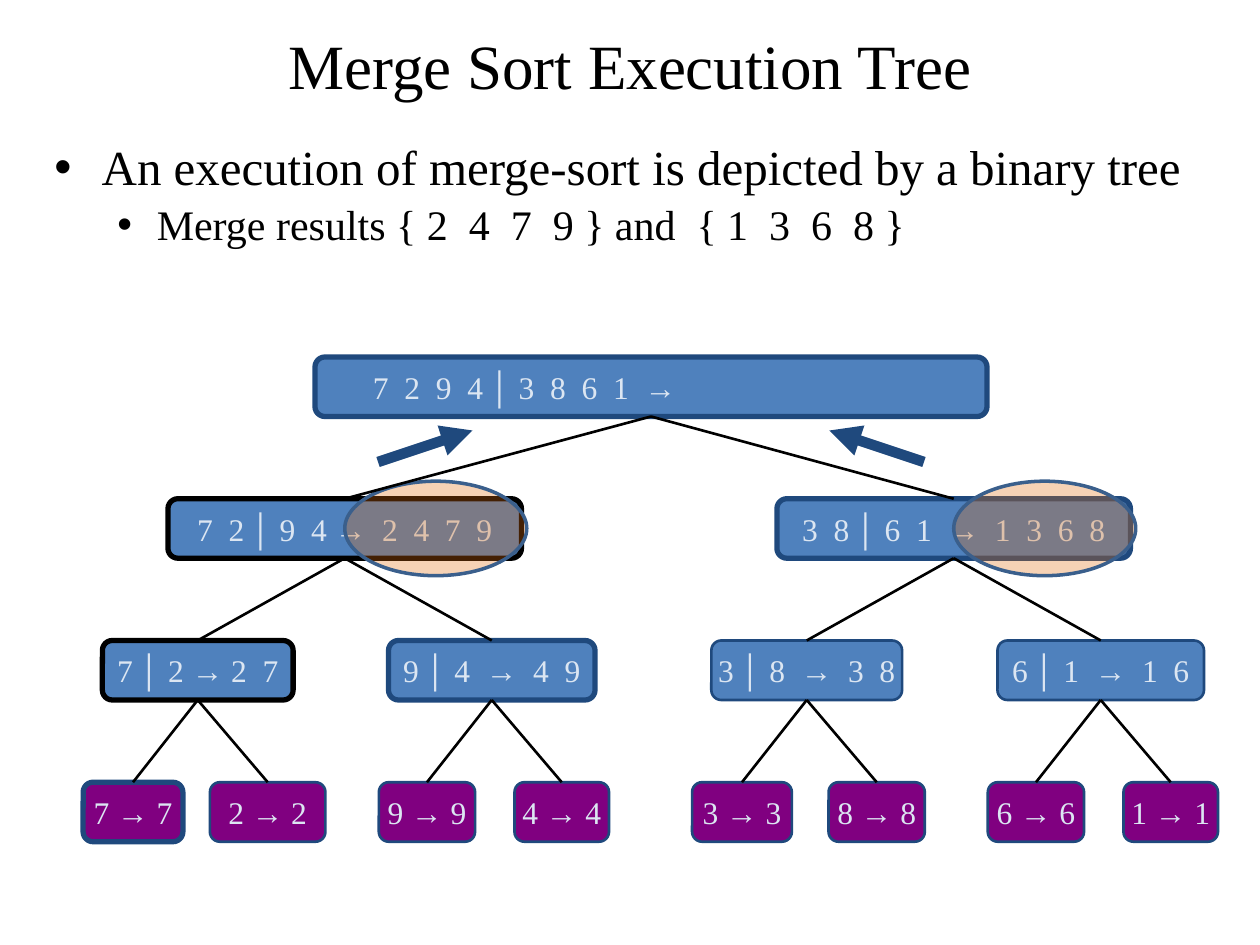
from dataclasses import dataclass
from itertools import groupby

from lxml.etree import SubElement
from pptx import Presentation
from pptx.dml.color import RGBColor
from pptx.enum.shapes import MSO_CONNECTOR as Connector, MSO_SHAPE as Preset
from pptx.enum.text import MSO_ANCHOR as Anchor, PP_ALIGN as Align
from pptx.oxml.ns import qn
from pptx.util import Pt


@dataclass(frozen=True)
class Theme:
    ink: str = "000000"
    branch_fill: str = "4F81BD"
    leaf_fill: str = "800080"
    border: str = "1F497D"
    node_text: str = "DCE6F2"
    result_fill: str = "E46C0A"
    result_border: str = "3A5F8C"
    font: str = "Times New Roman"
    bar_font: str = "Arial"
    title_size: int = 36
    bullet_size: int = 28
    sub_bullet_size: int = 24
    node_size: int = 18
    thin: float = 1.5
    thick: float = 3


THEME = Theme()


@dataclass(frozen=True)
class Node:
    text: str
    width: float
    line: float = THEME.thin
    border: str = THEME.border
    children: tuple = ()
    indent: float = 0  # left-aligned when set, otherwise centred
    has_result: bool = False


def leaf(digit, width, line=THEME.thin):
    return Node(f"{digit} → {digit}", width, line)


THICK, ACTIVE = THEME.thick, THEME.ink
SORT_TREE = Node("7  2  9  4 │ 3  8  6  1  →", 384, THICK, indent=31.5, children=(
    Node("7  2 │ 9  4 → 2  4  7  9".replace("→", "→ "), 202, THICK, ACTIVE,
         has_result=True, children=(
             Node("7 │ 2 → 2  7", 109, THICK, ACTIVE, (leaf(7, 57, THICK), leaf(2, 66))),
             Node("9 │ 4  →  4  9", 118, THICK, children=(leaf(9, 55), leaf(4, 54))))),
    Node("3  8 │ 6  1  →  1  3  6  8", 202, THICK, has_result=True, children=(
        Node("3 │ 8  →  3  8", 109, children=(leaf(3, 57), leaf(8, 55))),
        Node("6 │ 1  →  1  6", 118, children=(leaf(6, 55), leaf(1, 54)))))))

# Centre offsets of the two children, by depth of the parent
CHILD_OFFSETS = ((-175, 173), (-84, 84), (-37, 40))
LEVEL_PITCH = 81
NODE_HEIGHT = 34


def write(paragraph, text, size, color=THEME.ink, align=Align.LEFT):
    """Add text, with bars in bold Arial and arrows in bold."""
    paragraph.alignment = align
    for symbol, chars in groupby(text, lambda c: c if c in "│→" else ""):
        run = paragraph.add_run()
        run.text = "".join(chars)
        run.font.name = THEME.bar_font if symbol == "│" else THEME.font
        run.font.size = Pt(size)
        run.font.bold = bool(symbol)
        run.font.color.rgb = RGBColor.from_string(color)


def add_text_frame(slide, box):
    frame = slide.shapes.add_textbox(*map(Pt, box)).text_frame
    frame.word_wrap = True
    return frame


def add_outlined(slide, preset, box, fill, border, line):
    shape = slide.shapes.add_shape(preset, *map(Pt, box))
    shape.shadow.inherit = False
    shape.fill.solid()
    shape.fill.fore_color.rgb = RGBColor.from_string(fill)
    shape.line.color.rgb = RGBColor.from_string(border)
    shape.line.width = Pt(line)
    return shape


def add_line(slide, start, end, color, width):
    line = slide.shapes.add_connector(Connector.STRAIGHT, *map(Pt, (*start, *end)))
    line.line.color.rgb = RGBColor.from_string(color)
    line.line.width = Pt(width)
    SubElement(line._element.spPr, qn("a:effectLst"))
    return line


def add_title(slide, box):
    frame = add_text_frame(slide, box)
    frame.vertical_anchor = Anchor.MIDDLE
    write(frame.paragraphs[0], "Merge Sort Execution Tree", THEME.title_size,
          align=Align.CENTER)


def add_bullets(slide, box):
    frame = add_text_frame(slide, box)
    bullets = (
        ("An execution of merge-sort is depicted by a binary tree",
         THEME.bullet_size, 27, 27),
        ("Merge results { 2  4  7  9 } and  { 1  3  6  8 }",
         THEME.sub_bullet_size, 58.5, 22.5),
    )
    for level, (text, size, margin, hanging) in enumerate(bullets):
        paragraph = frame.add_paragraph() if level else frame.paragraphs[0]
        paragraph.level = level
        paragraph.line_spacing = 0.9
        paragraph.space_before = Pt(0.2 * size)
        write(paragraph, text, size)
        properties = paragraph._p.get_or_add_pPr()
        properties.set("marL", str(Pt(margin)))
        properties.set("indent", str(-Pt(hanging)))
        SubElement(properties, qn("a:buFont"), typeface=THEME.bar_font)
        SubElement(properties, qn("a:buChar"), char="•")


def add_node(slide, node, center, top, depth=0):
    """Draw a node, then its subtrees and the branches to them."""
    box = (center - node.width / 2, top, node.width, NODE_HEIGHT)
    fill = THEME.branch_fill if node.children else THEME.leaf_fill
    parent = add_outlined(slide, Preset.ROUNDED_RECTANGLE, box, fill,
                          node.border, node.line)
    frame = parent.text_frame
    frame.vertical_anchor = Anchor.MIDDLE
    frame.word_wrap = bool(node.indent)
    if node.indent:
        frame.margin_left = Pt(node.indent)
    write(frame.paragraphs[0], node.text, THEME.node_size, THEME.node_text,
          Align.LEFT if node.indent else Align.CENTER)

    if node.children:
        for subtree, offset in zip(node.children, CHILD_OFFSETS[depth]):
            child = add_node(slide, subtree, center + offset, top + LEVEL_PITCH,
                             depth + 1)
            branch = add_line(slide, (0, 0), (0, 0), THEME.ink, THEME.thin)
            branch.begin_connect(parent, 2)
            branch.end_connect(child, 0)
    if node.has_result:
        add_result_highlight(slide, (center, top - 10, 104, NODE_HEIGHT + 20))
    return parent


def add_result_highlight(slide, box):
    oval = add_outlined(slide, Preset.OVAL, box, THEME.result_fill,
                        THEME.result_border, 2)
    color = oval._element.spPr.find(f"{qn('a:solidFill')}/{qn('a:srgbClr')}")
    SubElement(color, qn("a:alpha"), val="30000")


def add_merge_tree(slide, box):
    left, top, width, _ = box
    center = left + width / 2
    add_node(slide, SORT_TREE, center, top)

    # Arrows that carry both halves up to the root
    for side in (-1, 1):
        arrow = add_line(slide, (center + side * 156, top + 60),
                         (center + side * 102, top + 42), THEME.border, 6)
        SubElement(arrow.line._get_or_add_ln(), qn("a:tailEnd"), type="triangle")


def main():
    deck = Presentation()
    deck.slide_width, deck.slide_height = Pt(720), Pt(540)
    slide = deck.slides.add_slide(deck.slide_layouts[6])
    add_title(slide, (36, 12, 648, 50))
    add_bullets(slide, (24, 78, 672, 102))
    add_merge_tree(slide, (48, 204, 648, 277))
    deck.save("out.pptx")


if __name__ == "__main__":
    main()
